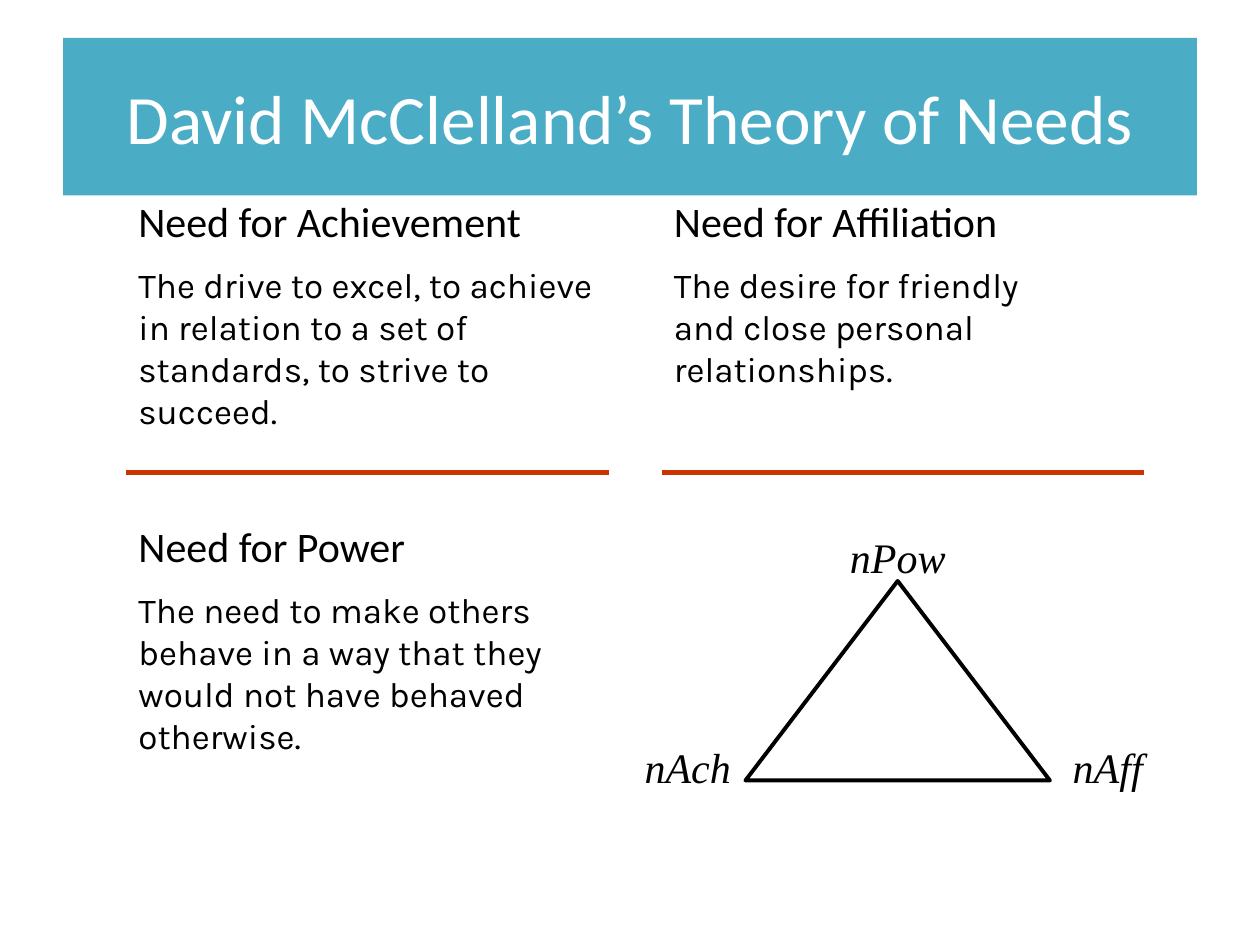
"""Build a slide on McClelland's theory of needs."""
from typing import NamedTuple

from lxml import etree
from pptx import Presentation
from pptx.dml.color import RGBColor
from pptx.enum.shapes import MSO_CONNECTOR, MSO_SHAPE
from pptx.enum.text import MSO_ANCHOR, MSO_AUTO_SIZE, PP_ALIGN
from pptx.oxml.ns import qn
from pptx.util import Inches, Pt

CENTER, LEFT = PP_ALIGN.CENTER, PP_ALIGN.LEFT
TOP, MIDDLE = MSO_ANCHOR.TOP, MSO_ANCHOR.MIDDLE
FIXED, GROW = MSO_AUTO_SIZE.NONE, MSO_AUTO_SIZE.SHAPE_TO_FIT_TEXT
STRAIGHT, TRIANGLE = MSO_CONNECTOR.STRAIGHT, MSO_SHAPE.ISOSCELES_TRIANGLE

WIDTH, HEIGHT = Inches(10), Inches(7.5)
COLUMNS, ROWS = 120, 90
LEFT_COLUMN, RIGHT_COLUMN = 12, 63
RULE_ROW, RULE_SPAN = 45, 46
LABEL_SPAN, LABEL_DEPTH = 13, 6
TEAL, RED, BLACK, WHITE = "4BACC6", "CC3300", "000000", "FFFFFF"


class Area(NamedTuple):
    """A block of grid cells."""
    column: float
    row: float
    span: float
    depth: float


class Need(NamedTuple):
    """A need with its definition."""
    name: str
    meaning: str
    area: Area


class Label(NamedTuple):
    """A name beside a corner of the triangle."""
    text: str
    column: float
    row: float


TITLE_AREA = Area(6, 3.6, 108, 15)
TRIANGLE_AREA = Area(71, 55.33, 29, 19)
TITLE_FORMAT = {"name": "Calibri", "size": Pt(39.6), "bold": False}
NAME_FORMAT = {"name": "Calibri", "size": Pt(24)}
MEANING_FORMAT = {"name": "Karla", "size": Pt(20)}
LABEL_FORMAT = {"name": "Times New Roman", "size": Pt(24), "italic": True}

NEEDS = (
    Need("Need for Achievement",
         "The drive to excel, to achieve in relation to a set of standards, to strive to succeed.",
         Area(LEFT_COLUMN, 18, 48, 24)),
    Need("Need for Affiliation",
         "The desire for friendly and close personal relationships.",
         Area(RIGHT_COLUMN, 18, 39, 20)),
    Need("Need for Power",
         "The need to make others behave in a way that they would not have behaved otherwise.",
         Area(LEFT_COLUMN, 49, 46, 24)),
)
LABELS = (Label("nAch", 59, 70), Label("nPow", 79, 50), Label("nAff", 99, 70))


def color(value: str) -> RGBColor:
    """Turn a hex string into a colour."""
    return RGBColor.from_string(value)


def across(column: float) -> int:
    """Return the length of a number of columns."""
    return round(WIDTH * column / COLUMNS)


def down(row: float) -> int:
    """Return the length of a number of rows."""
    return round(HEIGHT * row / ROWS)


def frame(area: Area) -> tuple[int, int, int, int]:
    """Return left, top, width and height of an area."""
    return across(area.column), down(area.row), across(area.span), down(area.depth)


def apply(target, values: dict) -> None:
    """Set each named value on an object."""
    for name, value in values.items():
        setattr(target, name, value)


def write(para, text: str, font: dict, ink: str = BLACK, align=LEFT) -> None:
    """Put formatted text into a paragraph."""
    para.alignment = align
    span = para.add_run()
    span.text = text
    apply(span.font, font)
    span.font.color.rgb = color(ink)


def add_title(page, text: str) -> None:
    """Place the title on its coloured band."""
    title = page.shapes.title
    apply(title, dict(zip(("left", "top", "width", "height"), frame(TITLE_AREA))))
    title.fill.solid()
    title.fill.fore_color.rgb = color(TEAL)
    apply(title.text_frame, {"word_wrap": True, "auto_size": FIXED, "vertical_anchor": MIDDLE})
    write(title.text_frame.paragraphs[0], text, TITLE_FORMAT, WHITE, CENTER)


def add_box(shapes, area: Area):
    """Add a wrapping text box and return its text frame."""
    box = shapes.add_textbox(*frame(area))
    apply(box.text_frame, {"word_wrap": True, "auto_size": GROW, "vertical_anchor": TOP})
    return box.text_frame


def add_need(page, need: Need) -> None:
    """Write a need above its definition."""
    text = add_box(page.shapes, need.area)
    write(text.paragraphs[0], need.name, NAME_FORMAT)
    para = text.add_paragraph()
    para.space_before = Pt(10)
    write(para, need.meaning, MEANING_FORMAT)


def add_rule(page, column: float) -> None:
    """Draw a red rule below a column."""
    height = down(RULE_ROW)
    rule = page.shapes.add_connector(
        STRAIGHT, across(column), height, across(column + RULE_SPAN), height)
    rule.line.color.rgb = color(RED)
    rule.line.width = Pt(3)
    etree.SubElement(rule._element.spPr, qn("a:effectLst"))


def add_diagram(page) -> None:
    """Group the triangle with its corner labels."""
    group = page.shapes.add_group_shape()
    triangle = group.shapes.add_shape(TRIANGLE, *frame(TRIANGLE_AREA))
    triangle.shadow.inherit = False
    triangle.fill.background()
    triangle.line.color.rgb = color(BLACK)
    triangle.line.width = Pt(2.25)
    for label in LABELS:
        area = Area(label.column, label.row, LABEL_SPAN, LABEL_DEPTH)
        text = add_box(group.shapes, area)
        write(text.paragraphs[0], label.text, LABEL_FORMAT, align=CENTER)


def main() -> None:
    """Build and save the deck."""
    deck = Presentation()
    apply(deck, {"slide_width": WIDTH, "slide_height": HEIGHT})
    page = deck.slides.add_slide(deck.slide_layouts.get_by_name("Title Only"))
    add_title(page, "David McClelland’s Theory of Needs")
    for column in (LEFT_COLUMN, RIGHT_COLUMN):
        add_rule(page, column)
    add_diagram(page)
    for need in NEEDS:
        add_need(page, need)
    deck.save("out.pptx")


if __name__ == "__main__":
    main()
